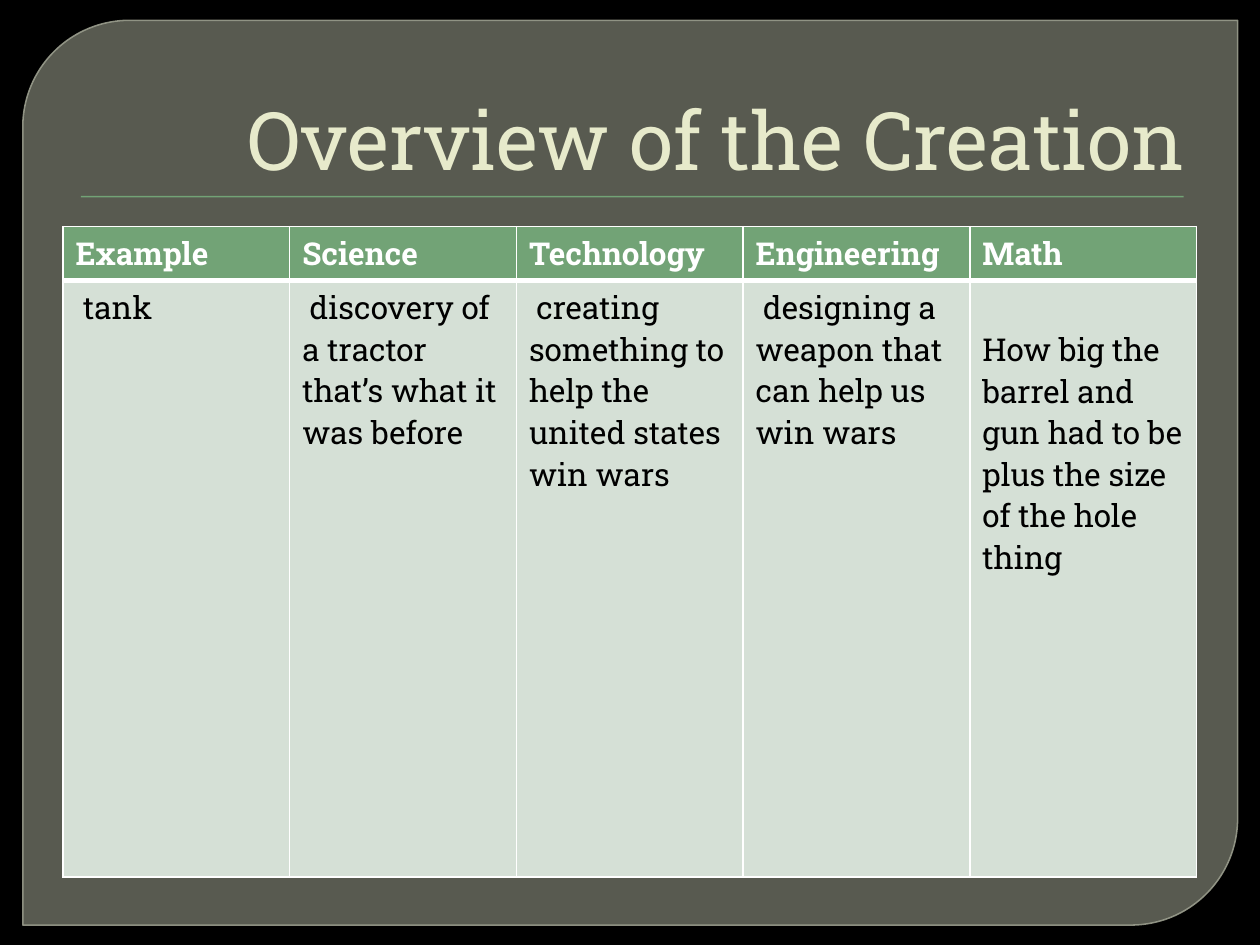
from lxml import etree
from pptx import Presentation
from pptx.dml.color import RGBColor
from pptx.enum.shapes import MSO_SHAPE
from pptx.enum.text import MSO_ANCHOR, PP_ALIGN
from pptx.oxml.ns import qn
from pptx.util import Cm, Pt

PANEL_SHAPE = MSO_SHAPE.ROUND_2_DIAG_RECTANGLE
RULE_SHAPE = MSO_SHAPE.RECTANGLE
BOTTOM, RIGHT = MSO_ANCHOR.BOTTOM, PP_ALIGN.RIGHT

# Content
TITLE = "Overview of the Creation"
COLUMNS = [
    ("Example", "tank"),
    ("Science", "discovery of a tractor that’s what it was before"),
    ("Technology", "creating something to help the united states win wars"),
    ("Engineering", "designing a weapon that can help us win wars"),
    ("Math", "How big the barrel and gun had to be plus the size of the hole thing"),
]
LOWERED_COLUMN = "Math"

# Style
FONT = "Roboto Slab"
COLORS = {
    "background": "000000", "panel": "888B7B", "edge": "9DA090",
    "green": "72A376", "title": "E7EACB", "body_fill": "D5E0D6",
    "white": "FFFFFF", "black": "000000",
}
TABLE_LEFT, TABLE_TOP = Cm(1.27), Cm(4.57)
COLUMN_WIDTH = Cm(4.57)
ROW_HEIGHTS = [Cm(1.08), Cm(12.03)]
FIRST_LINE_INDENT = Cm(0.15)
LOWERED_MARGIN = Cm(0.97)


def rgb(name):
    return RGBColor.from_string(COLORS[name])


def set_alpha(fill, percent):
    color = fill._xPr.find(qn("a:solidFill"))[0]
    etree.SubElement(color, qn("a:alpha"), val=str(percent * 1000))


def add_block(slide, kind, left, top, width, height, fill):
    block = slide.shapes.add_shape(kind, left, top, width, height)
    block.shadow.inherit = False
    block.fill.solid()
    block.fill.fore_color.rgb = rgb(fill)
    block.line.fill.background()
    return block


def write(para, text, size, color, bold=False):
    span = para.add_run()
    span.text = text
    span.font.name = FONT
    span.font.size = Pt(size)
    span.font.bold = bold
    span.font.color.rgb = rgb(color)


def set_borders(cell, top, bottom):
    properties = cell._tc.get_or_add_tcPr()
    widths = {"a:lnL": 1, "a:lnR": 1, "a:lnT": top, "a:lnB": bottom}
    for position, (tag, width) in enumerate(widths.items()):
        line = etree.Element(qn(tag), w=str(Pt(width)))
        fill = etree.SubElement(line, qn("a:solidFill"))
        etree.SubElement(fill, qn("a:srgbClr"), val=COLORS["white"])
        properties.insert(position, line)


def fill_cell(cell, text, fill, color, bold, top, bottom):
    cell.fill.solid()
    cell.fill.fore_color.rgb = rgb(fill)
    set_borders(cell, top, bottom)
    para = cell.text_frame.paragraphs[0]
    write(para, text, 18, color, bold)
    return para


def add_background(slide):
    slide.background.fill.solid()
    slide.background.fill.fore_color.rgb = rgb("background")
    panel = add_block(slide, PANEL_SHAPE, Cm(0.46), Cm(0.41), Cm(24.49), Cm(18.24), "panel")
    panel.adjustments[0] = 0.118
    panel.adjustments[1] = 0
    set_alpha(panel.fill, 65)
    panel.line.color.rgb = rgb("edge")
    panel.line.width = Pt(0.87)
    set_alpha(panel.line.fill, 88)
    add_block(slide, RULE_SHAPE, Cm(1.63), Cm(3.95), Cm(22.23), Cm(0.03), "green")


def add_title(slide):
    box = slide.shapes.add_textbox(Cm(1.27), Cm(0.71), Cm(22.86), Cm(3.18))
    box.text_frame.word_wrap = True
    box.text_frame.vertical_anchor = BOTTOM
    para = box.text_frame.paragraphs[0]
    para.alignment = RIGHT
    write(para, TITLE, 46, "title")


def add_overview_table(slide):
    table = slide.shapes.add_table(
        len(ROW_HEIGHTS), len(COLUMNS), TABLE_LEFT, TABLE_TOP,
        COLUMN_WIDTH * len(COLUMNS), sum(ROW_HEIGHTS)).table
    table.horz_banding = False
    for row, height in zip(table.rows, ROW_HEIGHTS):
        row.height = height
    for index, (heading, text) in enumerate(COLUMNS):
        table.columns[index].width = COLUMN_WIDTH
        fill_cell(table.cell(0, index), heading, "green", "white", True, 1, 3)
        body = table.cell(1, index)
        para = fill_cell(body, text, "body_fill", "black", False, 3, 1)
        if heading == LOWERED_COLUMN:
            body.margin_top = LOWERED_MARGIN
        else:
            para._p.get_or_add_pPr().set("indent", str(FIRST_LINE_INDENT))


def main():
    deck = Presentation()
    deck.slide_width, deck.slide_height = Cm(25.4), Cm(19.05)
    slide = deck.slides.add_slide(deck.slide_layouts[6])
    add_background(slide)
    add_title(slide)
    add_overview_table(slide)
    deck.save("out.pptx")


if __name__ == "__main__":
    main()
